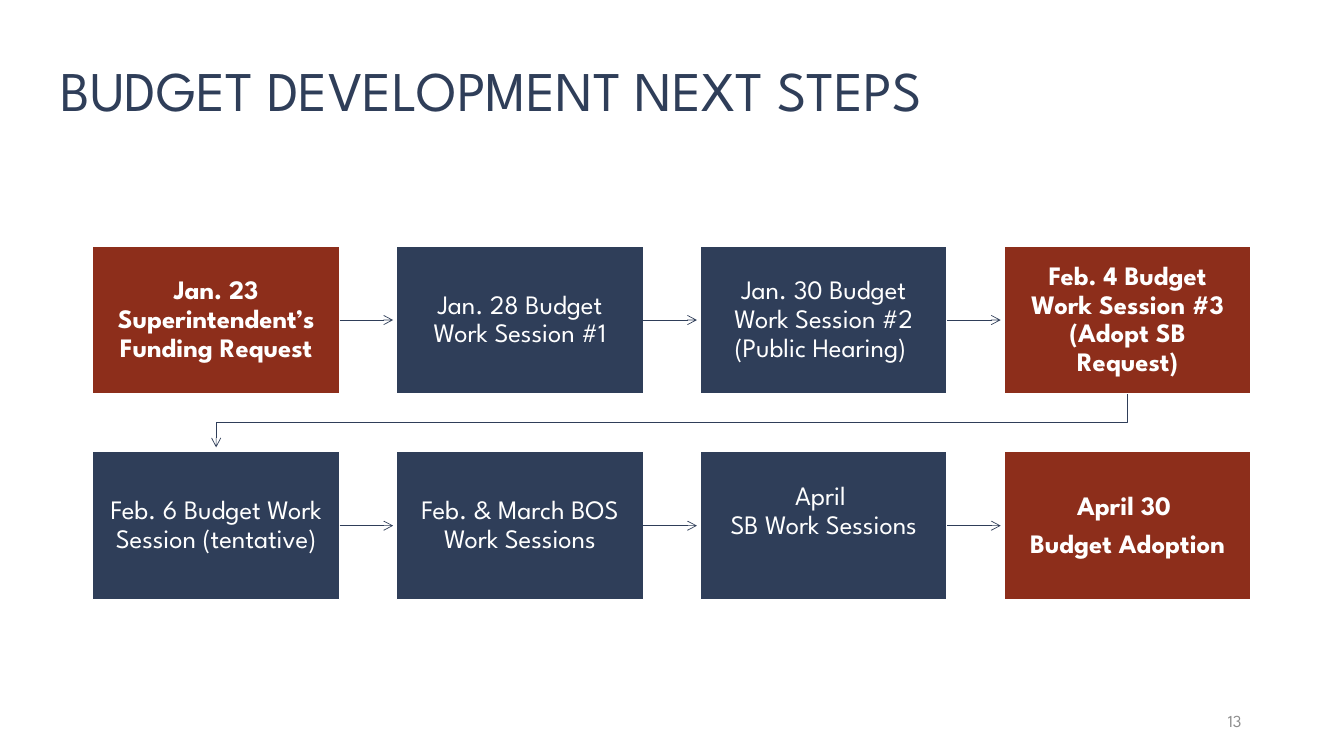
"""Build the budget development next steps slide."""
from dataclasses import dataclass
from typing import Any

from lxml.etree import SubElement
from pptx import Presentation
from pptx.dml.color import RGBColor
from pptx.enum.shapes import MSO_CONNECTOR, MSO_SHAPE
from pptx.enum.text import MSO_ANCHOR, MSO_AUTO_SIZE, PP_ALIGN
from pptx.oxml.ns import qn
from pptx.util import Pt

COLORS = {"navy": "2F3E59", "rust": "8D2E1B", "white": "FFFFFF", "gray": "8C8C8C"}
FONT = "League Spartan"
LEFT, PITCH, BOX_W, BOX_H = 66.2, 217, 176.4, 105.8
ROW_TOPS = (175.7, 322.6)
COLUMNS = 4
ARROW_LEN = 38.2
INSET = 10.8
LINE_H = 20.6


@dataclass
class Step:
    """One box of the timeline."""
    text: str
    milestone: bool = False
    lift: float = 0


STEPS = [
    Step("Jan. 23 Superintendent’s Funding Request", True),
    Step("Jan. 28 Budget Work Session #1"),
    Step("Jan. 30 Budget Work Session #2 (Public Hearing) "),
    Step("Feb. 4 Budget Work Session #3 (Adopt SB Request)", True),
    Step("Feb. 6 Budget Work Session (tentative)"),
    Step("Feb. & March BOS Work Sessions"),
    Step("April \vSB Work Sessions", lift=LINE_H),
    Step("April 30 \nBudget Adoption", True),
]


def rgb(name: str) -> RGBColor:
    """Return the named colour."""
    return RGBColor.from_string(COLORS[name])


def apply(target: Any, values: dict[str, Any]) -> None:
    """Set every attribute listed in values."""
    for name, value in values.items():
        setattr(target, name, value)


def write(tf: Any, text: str, color: str, frame: dict, para: dict, font: dict) -> None:
    """Fill and format a text frame."""
    apply(tf, {"word_wrap": True, "auto_size": MSO_AUTO_SIZE.NONE, **frame})
    tf.text = text
    for p in tf.paragraphs:
        apply(p, para)
        for r in p.runs:
            apply(r.font, {"name": FONT, **font})
            r.font.color.rgb = rgb(color)


def style_arrow(sp: Any) -> None:
    """Give a line its colour, width and arrowhead, without shadow."""
    sp.line.color.rgb = rgb("navy")
    sp.line.width = Pt(0.5)
    ln = sp.line._get_or_add_ln()
    SubElement(ln, qn("a:tailEnd"), type="arrow")
    SubElement(ln.getparent(), qn("a:effectLst"))


def add_step(s: Any, step: Step, x: float, y: float) -> None:
    """Draw one step box with its text."""
    sp = s.shapes.add_shape(MSO_SHAPE.RECTANGLE, Pt(x), Pt(y), Pt(BOX_W), Pt(BOX_H))
    sp.shadow.inherit = False
    sp.fill.solid()
    sp.fill.fore_color.rgb = rgb("rust" if step.milestone else "navy")
    sp.line.color.rgb = rgb("white")
    sp.line.width = Pt(1)
    frame = {f"margin_{side}": Pt(INSET) for side in ("left", "top", "right")}
    frame |= {"margin_bottom": Pt(INSET + step.lift), "vertical_anchor": MSO_ANCHOR.MIDDLE}
    para = {"alignment": PP_ALIGN.CENTER, "line_spacing": 0.9, "space_after": Pt(7)}
    write(sp.text_frame, step.text, "white", frame, para,
          {"size": Pt(19), "bold": step.milestone})


def add_arrow(s: Any, x: float, y: float) -> None:
    """Draw the arrow that leaves a box to the right."""
    style_arrow(s.shapes.add_connector(
        MSO_CONNECTOR.STRAIGHT, Pt(x), Pt(y), Pt(x + ARROW_LEN), Pt(y)))


def add_row_link(s: Any) -> None:
    """Draw the bent arrow from the end of row one to the start of row two."""
    start_x = LEFT + (COLUMNS - 1) * PITCH + BOX_W / 2
    end_x = LEFT + BOX_W / 2
    top, bottom = ROW_TOPS[0] + BOX_H, ROW_TOPS[1] - 3
    bend = (ROW_TOPS[0] + BOX_H + ROW_TOPS[1]) / 2
    fb = s.shapes.build_freeform(Pt(start_x), Pt(top))
    points = [(start_x, bend), (end_x, bend), (end_x, bottom)]
    fb.add_line_segments([(Pt(x), Pt(y)) for x, y in points], close=False)
    sp = fb.convert_to_shape()
    sp.fill.background()
    style_arrow(sp)


def main() -> None:
    """Build and save the slide."""
    prs = Presentation()
    apply(prs, {"slide_width": Pt(960), "slide_height": Pt(540)})
    s = prs.slides.add_slide(prs.slide_layouts[5])

    title = s.shapes.title
    apply(title, {"left": Pt(36), "top": Pt(36), "width": Pt(888), "height": Pt(86.4)})
    write(title.text_frame, "BUDGET DEVELOPMENT NEXT STEPS", "navy",
          {"vertical_anchor": MSO_ANCHOR.TOP},
          {"alignment": PP_ALIGN.LEFT, "space_after": Pt(3)}, {"size": Pt(40)})

    for i, step in enumerate(STEPS):
        row, col = divmod(i, COLUMNS)
        x, y = LEFT + col * PITCH, ROW_TOPS[row]
        add_step(s, step, x, y)
        if col < COLUMNS - 1:
            add_arrow(s, x + BOX_W, y + BOX_H / 2)
    add_row_link(s)

    number = s.shapes.add_textbox(Pt(678), Pt(500.4), Pt(216), Pt(28.8))
    write(number.text_frame, "13", "gray", {"vertical_anchor": MSO_ANCHOR.MIDDLE},
          {"alignment": PP_ALIGN.RIGHT}, {"size": Pt(12)})
    prs.save("out.pptx")


if __name__ == "__main__":
    main()
